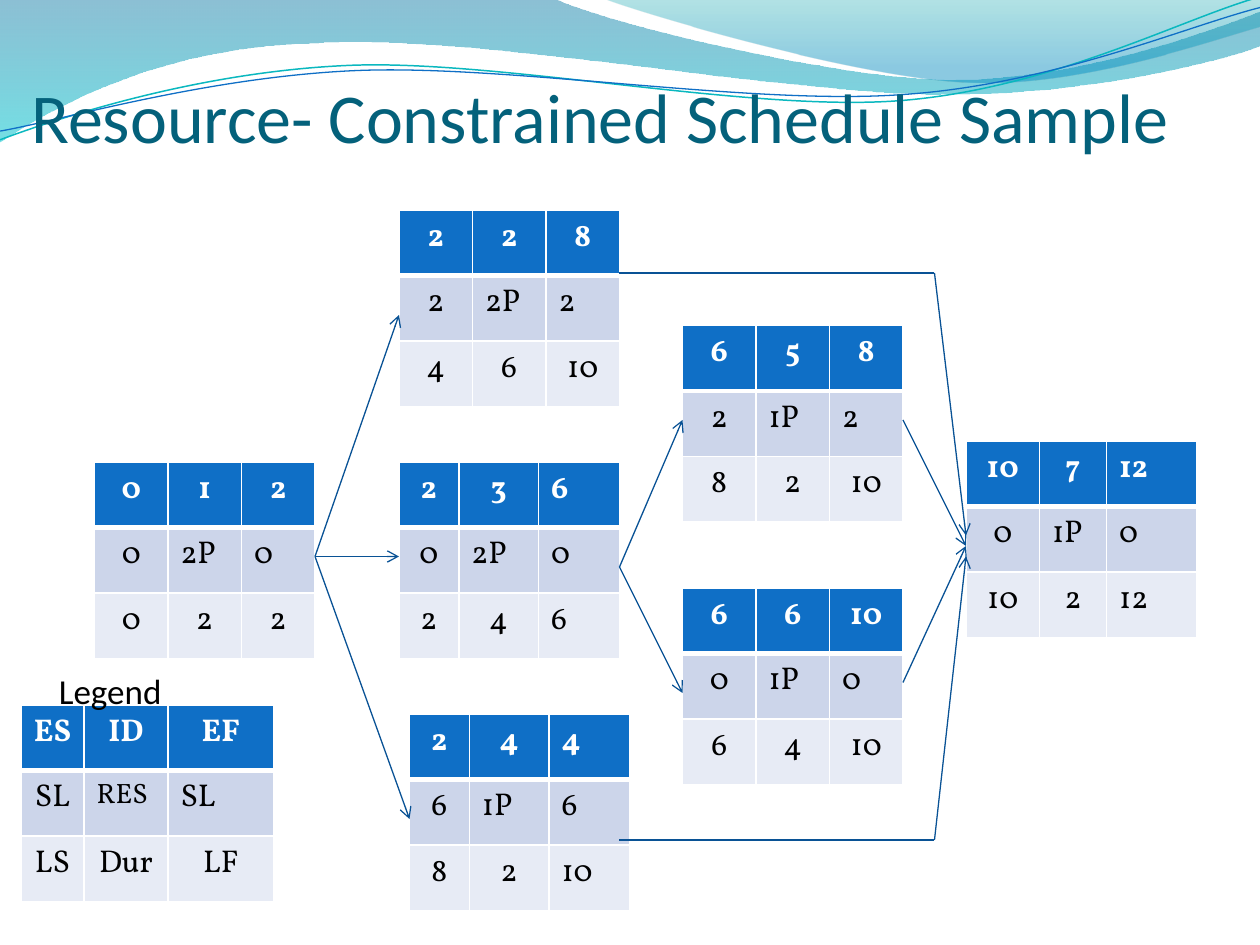
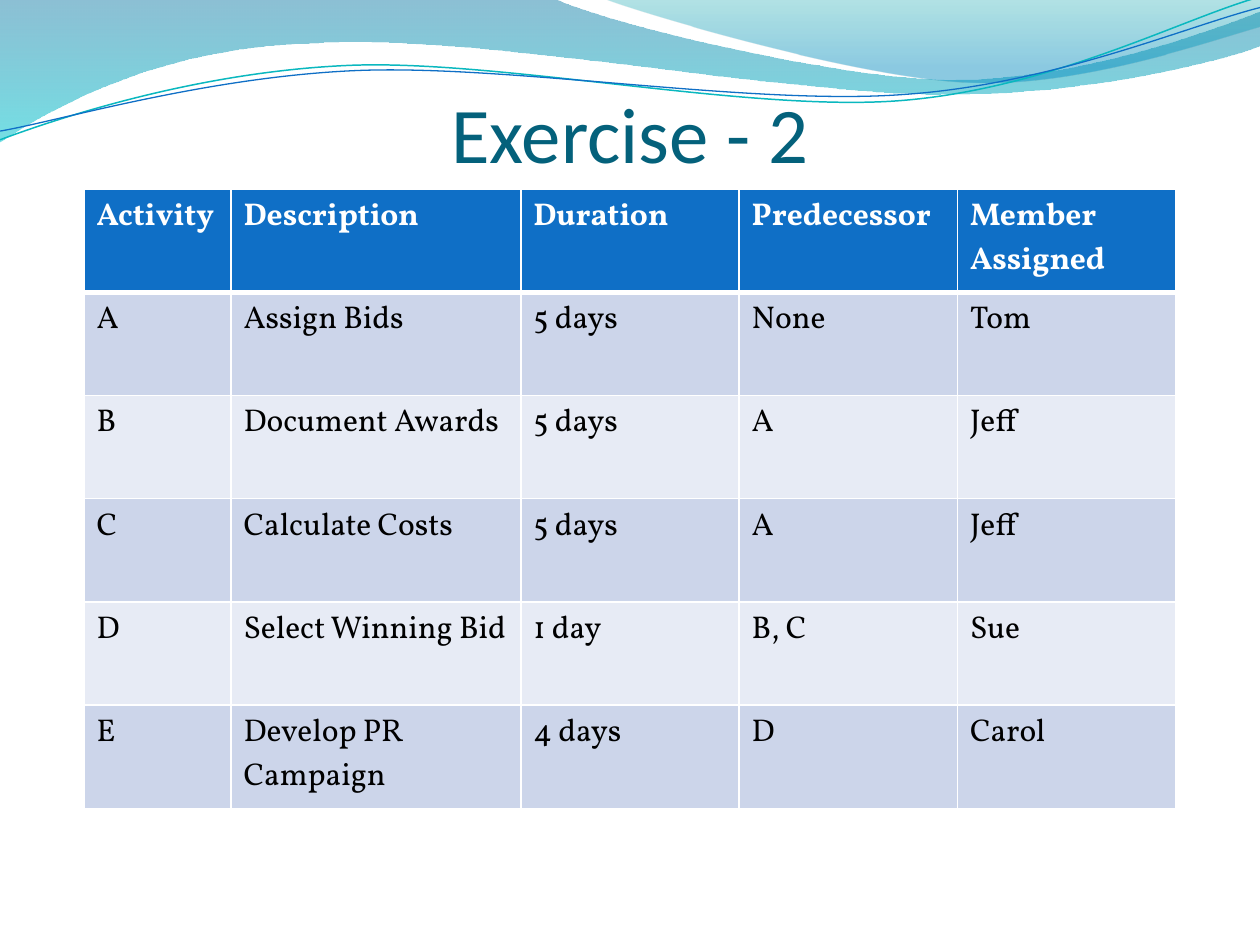
import pptx
import pptx.dml.color
import pptx.enum.shapes
import pptx.enum.text
import pptx.oxml
import pptx.oxml.ns
import pptx.util

Pt = pptx.util.Pt
RGBColor = pptx.dml.color.RGBColor
ALIGN = pptx.enum.text.PP_ALIGN
ANCHOR = pptx.enum.text.MSO_ANCHOR
qn = pptx.oxml.ns.qn

WHITE = RGBColor(0xFF, 0xFF, 0xFF)
BLACK = RGBColor(0x00, 0x00, 0x00)
TITLE_TEAL = RGBColor(0x04, 0x61, 0x7B)
HEADER_BLUE = RGBColor(0x0F, 0x6F, 0xC6)
DARK_BAND = RGBColor(0xCC, 0xD5, 0xEA)
LIGHT_BAND = RGBColor(0xE7, 0xEB, 0xF5)
ARROW_BLUE = RGBColor(0x09, 0x52, 0x95)
THREAD_TEAL = RGBColor(0x0A, 0xB8, 0xBF)
WAVE_BLUE = RGBColor(0x00, 0x74, 0xA1)
WAVE_CYAN = RGBColor(0x00, 0xC6, 0xCF)
CREST_TEAL = RGBColor(0x00, 0xA1, 0xA9)
CREST_BLUE = RGBColor(0x00, 0x8B, 0xBF)

HEADING_FONT = "Calibri"
TABLE_FONT = "Vollkorn"

WAVE = [
    (0, 0), (316.8, -0.7),
    (342.7, 12.2, 478.1, 45.4, 545.8, 45.4),
    (614.2, 45.4, 689.8, 18.7, 720, 6.5),
    (720.7, 25.9),
    (707.8, 31.7, 626.4, 54.7, 537.1, 54),
    (447.8, 54, 275, 20.2, 185, 24.5),
    (92.9, 25.9, 33.1, 59.8, -0.7, 81.4),
    (0, 0),
]
CREST = [
    (344.9, -0.7),
    (366.5, 7.9, 491, 44.6, 553.7, 46.8),
    (616.3, 49.7, 691.9, 23, 720, 15.1),
    (720, 0), (344.9, -0.7),
]
TEAL_THREAD = [
    (0, 79.9),
    (34.6, 67, 113.8, 41, 199.4, 37.4),
    (284.4, 33.8, 427, 64.1, 513.4, 57.6),
    (599.8, 51.1, 675.4, 10.8, 718.6, -1.4),
]
BLUE_THREAD = [
    (0, 74.9),
    (33.8, 69.1, 118.1, 43.9, 203.8, 40.3),
    (290.2, 36.7, 429.8, 60.5, 516.2, 54),
    (601.9, 48.2, 677.5, 15.1, 720, 4.3),
]

EVEN = (42, 42, 42)
NARROW_FIRST = (34.2, 45.5, 46.3)
NODE_ROW = 37.44
ACTIVITY_NODES = [
    (54, 264, EVEN, ["0 1 2", "0 2P 0", "0 2 2"], False),
    (12, 402.8, (36, 48, 60.5), ["ES ID EF", "SL RES SL", "LS Dur LF"], False),
    (228, 120, EVEN, ["2 2 8", "2 2P 2", "4 6 10"], False),
    (228, 264, NARROW_FIRST, ["2 3 6", "0 2P 0", "2 4 6"], True),
    (390, 186, EVEN, ["6 5 8", "2 1P 2", "8 2 10"], False),
    (552, 252, (42, 38.3, 51.7), ["10 7 12", "0 1P 0", "10 2 12"], True),
    (390, 336, EVEN, ["6 6 10", "0 1P 0", "6 4 10"], False),
    (234, 408, NARROW_FIRST, ["2 4 4", "6 1P 6", "8 2 10"], True),
]
DEPENDENCIES = [
    (180, 318, 228, 180),
    (180, 318, 228, 318),
    (180, 318, 234, 468),
    (354, 324, 390, 240),
    (354, 324, 390, 396),
    (516, 240, 552, 312),
    (516, 390, 552, 312),
    (534, 156, 552, 306),
    (534, 480, 552, 318),
]
BYPASS_HEIGHTS = [156, 480]

EXERCISE_ROWS = [
    ["Activity", "Description", "Duration", "Predecessor", "Member Assigned"],
    ["A", "Assign Bids", "5 days", "None", "Tom"],
    ["B", "Document Awards", "5 days", "A", "Jeff"],
    ["C", "Calculate Costs", "5 days", "A", "Jeff"],
    ["D", "Select Winning Bid", "1 day", "B, C", "Sue"],
    ["E", "Develop PR Campaign", "4 days", "D", "Carol"],
]


def bend_segment(shape, line_to, segment):
    curve = line_to.makeelement(qn("a:cubicBezTo"))
    for x, y in zip(segment[::2], segment[1::2]):
        position = {"x": str(Pt(x) - shape.left), "y": str(Pt(y) - shape.top)}
        curve.append(curve.makeelement(qn("a:pt"), position))
    line_to.getparent().replace(line_to, curve)


def add_outline(slide, outline, close):
    anchors = [(Pt(segment[-2]), Pt(segment[-1])) for segment in outline]
    builder = slide.shapes.build_freeform(*anchors[0])
    builder.add_line_segments(anchors[1:], close=close)
    shape = builder.convert_to_shape()
    shape.shadow.inherit = False
    lines = list(shape._element.iter(qn("a:lnTo")))
    for line_to, segment in zip(lines, outline[1:]):
        if len(segment) == 6:
            bend_segment(shape, line_to, segment)
    return shape


def add_wave(slide, outline, stops):
    shape = add_outline(slide, outline, True)
    shape.line.fill.background()
    shape.fill.gradient()
    shape.fill.gradient_angle = 270
    for gradient_stop, (position, color, _) in zip(shape.fill.gradient_stops, stops):
        gradient_stop.position = position
        gradient_stop.color.rgb = color
    colors = shape._element.spPr.iter(qn("a:srgbClr"))
    for color_element, (_, _, opacity) in zip(colors, stops):
        alpha = color_element.makeelement(qn("a:alpha"), {"val": str(opacity * 1000)})
        color_element.append(alpha)


def add_thread(slide, outline, color, width):
    shape = add_outline(slide, outline, False)
    shape.fill.background()
    shape.line.color.rgb = color
    shape.line.width = Pt(width)


def format_text(paragraph, font_name, size, color, bold=False, alignment=ALIGN.LEFT):
    paragraph.alignment = alignment
    for run in paragraph.runs:
        run.font.name = font_name
        run.font.size = Pt(size)
        run.font.bold = bold
        run.font.color.rgb = color


def add_text(slide, text, box, size, color, alignment, anchor):
    shape = slide.shapes.add_textbox(*map(Pt, box))
    text_frame = shape.text_frame
    text_frame.word_wrap = True
    text_frame.vertical_anchor = anchor
    text_frame.text = text
    format_text(text_frame.paragraphs[0], HEADING_FONT, size, color, alignment=alignment)
    return text_frame


def add_title(slide, text, box, size, alignment):
    text_frame = add_text(slide, text, box, size, TITLE_TEAL, alignment, ANCHOR.BOTTOM)
    text_frame.margin_left = text_frame.margin_right = text_frame.margin_bottom = 0
    text_frame.margin_top = Pt(3.6)


def add_themed_slide(presentation):
    slide = presentation.slides.add_slide(presentation.slide_layouts[6])
    add_wave(slide, WAVE, [(0, WAVE_BLUE, 45), (1, WAVE_CYAN, 55)])
    add_wave(slide, CREST, [(0, CREST_TEAL, 30), (0.8, CREST_BLUE, 45)])
    add_thread(slide, TEAL_THREAD, THREAD_TEAL, 0.85)
    add_thread(slide, BLUE_THREAD, HEADER_BLUE, 0.75)
    return slide


def set_borders(cell, row):
    properties = cell._tc.get_or_add_tcPr()
    widths = {"L": 1, "R": 1, "T": 3 if row == 1 else 1, "B": 3 if row == 0 else 1}
    for side, width in widths.items():
        properties.append(pptx.oxml.parse_xml(
            f'<a:ln{side} {pptx.oxml.ns.nsdecls("a")} w="{Pt(width)}"><a:solidFill>'
            f'<a:srgbClr val="{WHITE}"/></a:solidFill></a:ln{side}>'))


def add_grid(slide, left, top, column_widths, row_height, rows, align_cell):
    frame = slide.shapes.add_table(
        len(rows), len(column_widths), Pt(left), Pt(top),
        Pt(sum(column_widths)), Pt(row_height * len(rows)))
    table = frame.table
    for column, width in zip(table.columns, column_widths):
        column.width = Pt(width)
    for row, texts in enumerate(rows):
        table.rows[row].height = Pt(row_height)
        header = row == 0
        for column, text in enumerate(texts):
            cell = table.cell(row, column)
            set_borders(cell, row)
            cell.fill.solid()
            cell.fill.fore_color.rgb = (
                HEADER_BLUE if header else DARK_BAND if row % 2 else LIGHT_BAND)
            cell.text_frame.text = text
            format_text(cell.text_frame.paragraphs[0], TABLE_FONT,
                        16 if text == "RES" else 18, WHITE if header else BLACK,
                        header, align_cell(row, column))


def add_activity_node(slide, left, top, column_widths, lines, last_column_left):
    def align_cell(row, column):
        flush = (row == 1 and column > 0) or (last_column_left and column == 2)
        return ALIGN.LEFT if flush else ALIGN.CENTER

    rows = [line.split() for line in lines]
    add_grid(slide, left, top, column_widths, NODE_ROW, rows, align_cell)


def add_link(slide, start_x, start_y, end_x, end_y, arrow=True):
    connector = slide.shapes.add_connector(
        pptx.enum.shapes.MSO_CONNECTOR.STRAIGHT,
        Pt(start_x), Pt(start_y), Pt(end_x), Pt(end_y))
    connector.line.color.rgb = ARROW_BLUE
    connector.line.width = Pt(0.75)
    properties = connector._element.spPr
    if arrow:
        line = properties.find(qn("a:ln"))
        line.append(line.makeelement(qn("a:tailEnd"), {"type": "arrow"}))
    properties.append(properties.makeelement(qn("a:effectLst")))


def build_schedule_slide(presentation):
    slide = add_themed_slide(presentation)
    add_title(slide, "Resource- Constrained Schedule Sample",
              (18, 24, 702, 66), 40, ALIGN.LEFT)
    for node in ACTIVITY_NODES:
        add_activity_node(slide, *node)
    for dependency in DEPENDENCIES:
        add_link(slide, *dependency)
    for height in BYPASS_HEIGHTS:
        add_link(slide, 354, height, 534, height, arrow=False)
    legend = add_text(slide, "Legend", (12, 381, 102, 30), 20, BLACK,
                      ALIGN.CENTER, ANCHOR.MIDDLE)
    legend.paragraphs[0].line_spacing = 0.9


def build_exercise_slide(presentation):
    slide = add_themed_slide(presentation)
    add_title(slide, "Exercise - 2", (36, 55.2, 648, 47), 45, ALIGN.CENTER)
    add_grid(slide, 48, 108, (84, 165.6, 124.8, 124.8, 124.8), 59, EXERCISE_ROWS,
             lambda row, column: ALIGN.LEFT)


def main():
    presentation = pptx.Presentation()
    presentation.slide_width = Pt(720)
    presentation.slide_height = Pt(540)
    build_schedule_slide(presentation)
    build_exercise_slide(presentation)
    presentation.save("out.pptx")


if __name__ == "__main__":
    main()
